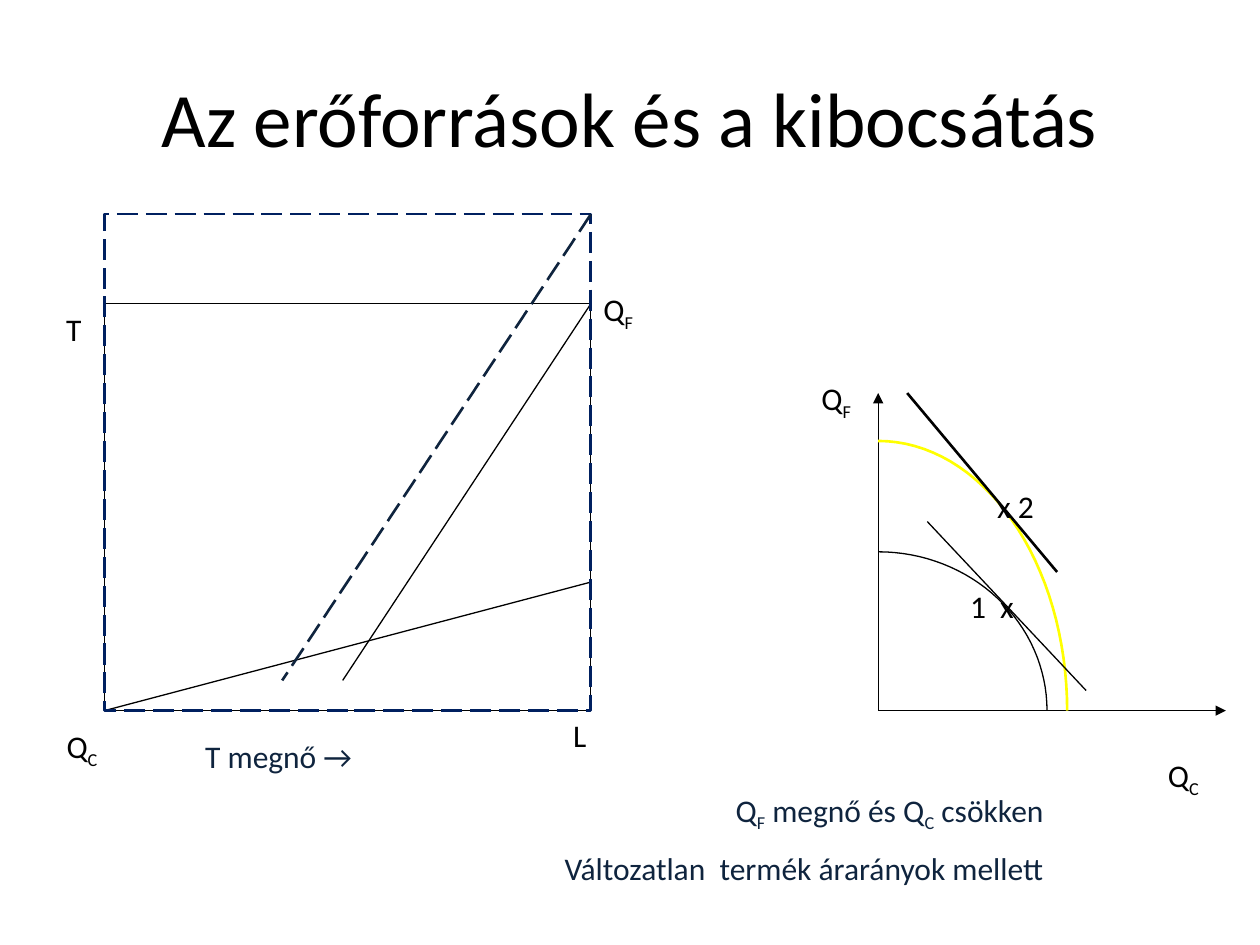
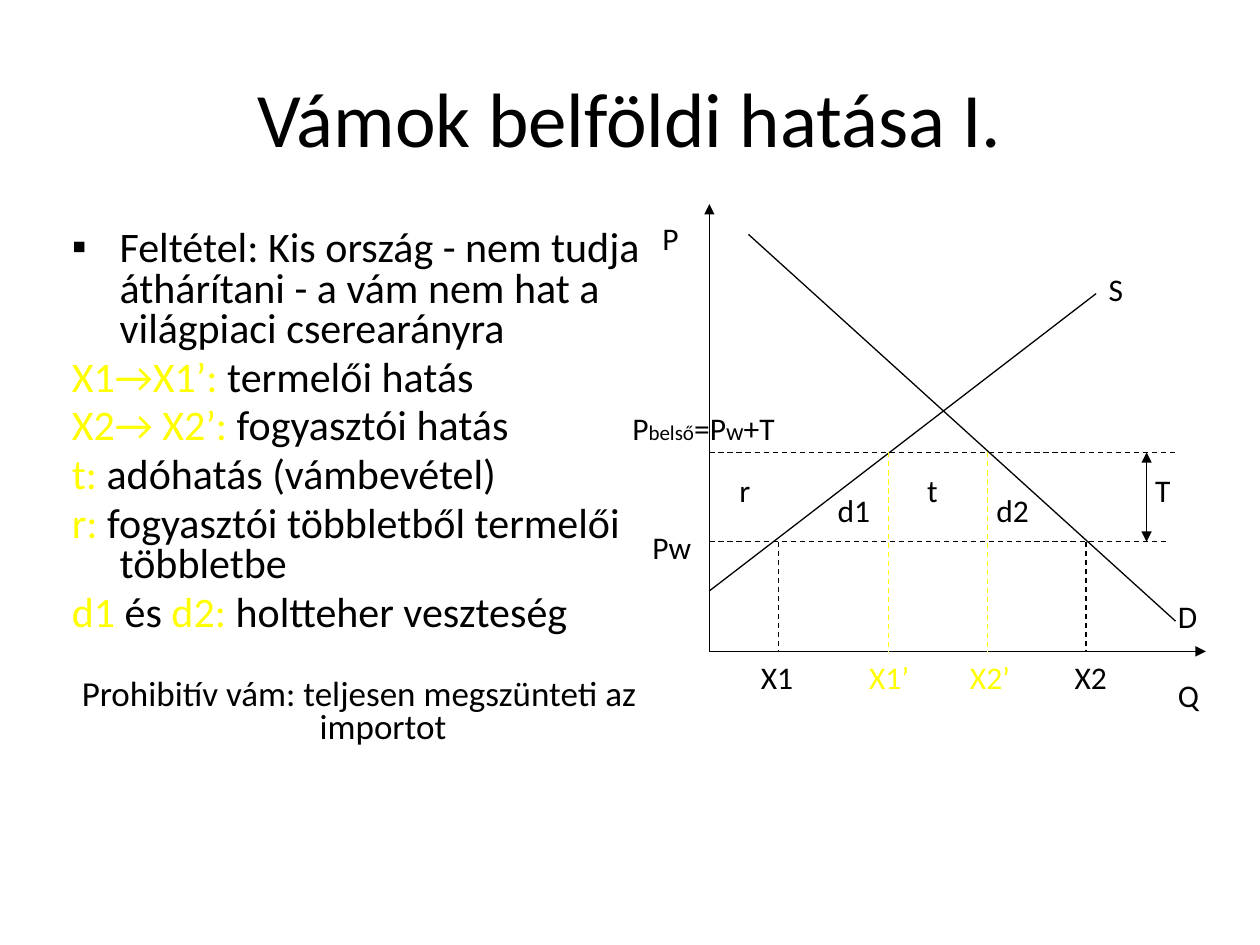
import math
from dataclasses import dataclass

import pptx
import pptx.util
import pptx.dml.color
import pptx.enum.dml
import pptx.enum.shapes
import pptx.enum.text
import pptx.oxml.ns
from lxml import etree

Inches = pptx.util.Inches
Pt = pptx.util.Pt
RGBColor = pptx.dml.color.RGBColor
Align = pptx.enum.text.PP_ALIGN
Dash = pptx.enum.dml.MSO_LINE
qn = pptx.oxml.ns.qn

# Shared style
BLACK = RGBColor(0x00, 0x00, 0x00)
NAVY = RGBColor(0x00, 0x20, 0x60)
DARK_BLUE = RGBColor(0x0F, 0x24, 0x3E)
YELLOW = RGBColor(0xFF, 0xFF, 0x00)
FONT = "Calibri"
LABEL_SIZE = 18
LABEL_HEIGHT = 0.4
THIN, THICK = 0.75, 1.5
TITLE_ONLY, TITLE_AND_BODY = 5, 1


@dataclass
class Box:
    left: float
    top: float
    width: float
    height: float

    def point(self, x, y):
        return Inches(self.left + x), Inches(self.top + y)

    def frame(self):
        return (*self.point(0, 0), Inches(self.width), Inches(self.height))


@dataclass
class Run:
    text: str
    size: float = LABEL_SIZE
    color: RGBColor = BLACK
    subscript: bool = False


def write_runs(paragraph, runs):
    for part in runs:
        run = paragraph.add_run()
        run.text = part.text
        run.font.name = FONT
        run.font.size = Pt(part.size)
        run.font.color.rgb = part.color
        if part.subscript:
            run._r.get_or_add_rPr().set("baseline", "-25000")


def quantity(good, color=BLACK):
    """Runs for Q with the good as subscript."""
    return [Run("Q", color=color), Run(good, color=color, subscript=True)]


def add_slide(presentation, layout, title):
    slide = presentation.slides.add_slide(presentation.slide_layouts[layout])
    shape = slide.shapes.title
    shape.left, shape.top, shape.width, shape.height = Box(0.5, 0.3, 9, 1.25).frame()
    shape.text_frame.vertical_anchor = pptx.enum.text.MSO_ANCHOR.MIDDLE
    paragraph = shape.text_frame.paragraphs[0]
    paragraph.alignment = Align.CENTER
    write_runs(paragraph, [Run(title, 44)])
    return slide


def add_text(slide, box, x, y, width, lines, wrap=True):
    """Text box at an offset in the box; lines are pairs of alignment and runs."""
    left, top = box.point(x, y)
    height = LABEL_HEIGHT + 0.45 * (len(lines) - 1)
    frame = slide.shapes.add_textbox(left, top, Inches(width), Inches(height)).text_frame
    frame.word_wrap = wrap
    frame.auto_size = pptx.enum.text.MSO_AUTO_SIZE.SHAPE_TO_FIT_TEXT
    for index, (alignment, runs) in enumerate(lines):
        paragraph = frame.add_paragraph() if index else frame.paragraphs[0]
        paragraph.alignment = alignment
        paragraph.space_before = Pt(LABEL_SIZE / 2 if index else 0)
        write_runs(paragraph, runs)


def add_label(slide, box, x, y, width, content, color=BLACK, alignment=Align.LEFT, wrap=True):
    runs = [Run(content, color=color)] if isinstance(content, str) else content
    add_text(slide, box, x, y, width, [(alignment, runs)], wrap)


def style_line(line, color, width, dash=None):
    line.color.rgb = color
    line.width = Pt(width)
    if dash:
        line.dash_style = dash


def add_segment(slide, box, start, end, color=BLACK, width=THIN, dash=None, arrows=()):
    connector = slide.shapes.add_connector(
        pptx.enum.shapes.MSO_CONNECTOR.STRAIGHT, *box.point(*start), *box.point(*end))
    style_line(connector.line, color, width, dash)
    for arrow in arrows:
        etree.SubElement(connector.line._get_or_add_ln(), qn(f"a:{arrow}"), type="triangle")
    etree.SubElement(connector._element.spPr, qn("a:effectLst"))


def add_axes(slide, box):
    origin = (0, box.height)
    for end in [(box.width, box.height), (0, 0)]:
        add_segment(slide, box, origin, end, arrows=["tailEnd"])


def add_outline(slide, box, color, width, dash=None):
    shape = slide.shapes.add_shape(pptx.enum.shapes.MSO_SHAPE.RECTANGLE, *box.frame())
    shape.shadow.inherit = False
    shape.fill.background()
    style_line(shape.line, color, width, dash)


def add_quarter_ellipse(slide, box, radius_x, radius_y, color, width, steps=32):
    """Curve round the lower left corner of the box, from its axis down to its base."""
    angles = [math.pi / 2 * step / steps for step in range(steps + 1)]
    points = [box.point(radius_x * math.sin(angle), box.height - radius_y * math.cos(angle))
              for angle in angles]
    builder = slide.shapes.build_freeform(*points[0])
    builder.add_line_segments(points[1:], close=False)
    shape = builder.convert_to_shape()
    shape.shadow.inherit = False
    shape.fill.background()
    style_line(shape.line, color, width)


def draw_factor_box(slide, box):
    """Factor box; land grows from the solid to the dashed outline."""
    land_top = 0.71
    right, bottom = box.width, box.height
    solid = Box(box.left, box.top + land_top, right, bottom - land_top)
    add_outline(slide, solid, BLACK, THIN)
    add_segment(slide, box, (0, bottom), (right, 2.92))
    add_segment(slide, box, (right, land_top), (1.89, 3.7))
    add_outline(slide, box, NAVY, THICK, Dash.LONG_DASH)
    add_segment(slide, box, (right, 0), (1.41, 3.7), DARK_BLUE, THICK, Dash.LONG_DASH)

    add_label(slide, box, 3.62, 3.93, 0.47, "L")
    add_label(slide, box, -0.48, land_top, 0.47, "T", alignment=Align.CENTER)
    add_label(slide, box, -0.4, 4.02, 0.63, quantity("C"))
    add_label(slide, box, right, 0.55, 0.71, quantity("F"))


def draw_frontiers(slide, box):
    """Production frontiers with price lines before and after the growth."""
    add_axes(slide, box)
    add_label(slide, box, -0.55, -0.16, 0.55, quantity("F"))
    add_label(slide, box, 2.2, 2.83, 0.71, quantity("C"))
    add_quarter_ellipse(slide, box, 1.34, 1.26, BLACK, THIN)
    add_quarter_ellipse(slide, box, 1.5, 2.14, YELLOW, THICK)
    add_segment(slide, box, (0.39, 1.02), (1.65, 2.36))
    add_segment(slide, box, (0.23, 0), (1.42, 1.42), width=THICK)
    add_label(slide, box, 0.63, 1.49, 0.71, "1  x")
    add_label(slide, box, 0.79, 0.7, 0.94, " x 2")


def write_conclusion(slide, box):
    outcome = [*quantity("F", DARK_BLUE), Run(" megnő és ", color=DARK_BLUE),
               *quantity("C", DARK_BLUE), Run(" csökken", color=DARK_BLUE)]
    add_text(slide, box, 0, 0, box.width, [
        (Align.LEFT, [Run("T megnő →", color=DARK_BLUE)]),
        (Align.RIGHT, outcome),
        (Align.RIGHT, [Run("Változatlan  termék árarányok mellett", color=DARK_BLUE)]),
    ])


def write_effects(slide, box):
    """Body list: the assumption, the effects with yellow keys, and a closing remark."""
    size = 24
    items = [
        [("Feltétel: Kis ország - nem tudja áthárítani - "
          "a vám nem hat a világpiaci cserearányra", BLACK)],
        [("X1→X1’:", YELLOW), (" termelői hatás", BLACK)],
        [("X2→ X2’:", YELLOW), (" fogyasztói hatás", BLACK)],
        [("t:", YELLOW), (" adóhatás (vámbevétel)", BLACK)],
        [("r:", YELLOW), (" fogyasztói többletből termelői többletbe", BLACK)],
        [("d1", YELLOW), (" és ", BLACK), ("d2:", YELLOW), (" holtteher veszteség", BLACK)],
        [("Prohibitív vám: teljesen megszünteti az importot", BLACK)],
    ]
    last = len(items) - 1
    shape = slide.placeholders[1]
    shape.left, shape.top, shape.width, shape.height = box.frame()
    frame = shape.text_frame
    frame.auto_size = pptx.enum.text.MSO_AUTO_SIZE.NONE
    for index, item in enumerate(items):
        paragraph = frame.add_paragraph() if index else frame.paragraphs[0]
        paragraph.line_spacing = 0.8
        paragraph.space_before = Pt({0: 0, last: 25}.get(index, size * 0.2))
        paragraph.alignment = Align.CENTER if index == last else Align.LEFT
        properties = paragraph._p.get_or_add_pPr()
        properties.set("marL", str(Inches(0.38)))
        properties.set("indent", str(-Inches(0.38)))
        if index == 0:
            etree.SubElement(properties, qn("a:buFont"), typeface="Arial")
            etree.SubElement(properties, qn("a:buChar"), char="▪")
        else:
            etree.SubElement(properties, qn("a:buNone"))
        text_size = 20 if index == last else size
        write_runs(paragraph, [Run(text, text_size, color) for text, color in item])


def draw_tariff_market(slide, box):
    """Supply and demand with the world price and the price including the tariff."""
    world, domestic, base = 2.68, 1.97, box.height
    add_axes(slide, box)

    # Demand, supply and price lines
    add_segment(slide, box, (0.31, 0.24), (3.7, 3.31))
    add_segment(slide, box, (0, 3.07), (3.07, 0.71))
    for price, end in [(world, 3.62), (domestic, 3.7)]:
        add_segment(slide, box, (0, price), (end, price), dash=Dash.DASH)

    # Quantities on the base
    for x, price, color in [(0.55, world, BLACK), (1.42, domestic, YELLOW),
                            (2.21, domestic, YELLOW), (2.99, world, BLACK)]:
        add_segment(slide, box, (x, price), (x, base), color, dash=Dash.DASH)
    for text, x, width, color in [("X1", 0.31, 0.71, BLACK), ("X2", 2.8, 0.51, BLACK),
                                  ("X1’", 1.17, 0.56, YELLOW), ("X2’", 1.97, 0.56, YELLOW)]:
        add_label(slide, box, x, base, width, text, color, wrap=text == "X1")

    # Names of axes, curves and prices
    for text, x, y, width in [("P", -0.47, 0.07, 0.63), ("Q", 3.62, 3.7, 0.47),
                              ("D", 3.62, 3.07, 0.47), ("S", 3.07, 0.47, 0.55),
                              ("Pw", -0.55, 2.52, 0.55)]:
        add_label(slide, box, x, y, width, text)
    add_label(slide, box, -0.71, 1.58, 1.57, [
        Run("P"), Run("belső", 12), Run("=P"), Run("w", 14), Run("+T")])

    # Tariff arrow and welfare areas
    add_segment(slide, box, (3.47, world), (3.47, domestic), arrows=["headEnd", "tailEnd"])
    for text, x, y, width in [("T", 3.44, 2.07, 0.35), ("r", 0.14, 2.07, 0.28),
                              ("d1", 0.92, 2.23, 0.48), ("t", 1.63, 2.07, 0.27),
                              ("d2", 2.18, 2.23, 0.48)]:
        add_label(slide, box, x, y, width, text, wrap=False)


def main():
    presentation = pptx.Presentation()
    presentation.slide_width, presentation.slide_height = Inches(10), Inches(7.5)

    slide = add_slide(presentation, TITLE_ONLY, "Az erőforrások és a kibocsátás")
    draw_factor_box(slide, Box(0.83, 1.7, 3.86, 3.94))
    write_conclusion(slide, Box(1.53, 5.8, 6.85, 1.3))
    draw_frontiers(slide, Box(6.97, 3.12, 2.76, 2.52))

    slide = add_slide(presentation, TITLE_AND_BODY, "Vámok belföldi hatása I.")
    write_effects(slide, Box(0.47, 1.78, 4.76, 4.95))
    draw_tariff_market(slide, Box(5.63, 1.62, 3.94, 3.55))

    presentation.save("out.pptx")


if __name__ == "__main__":
    main()
